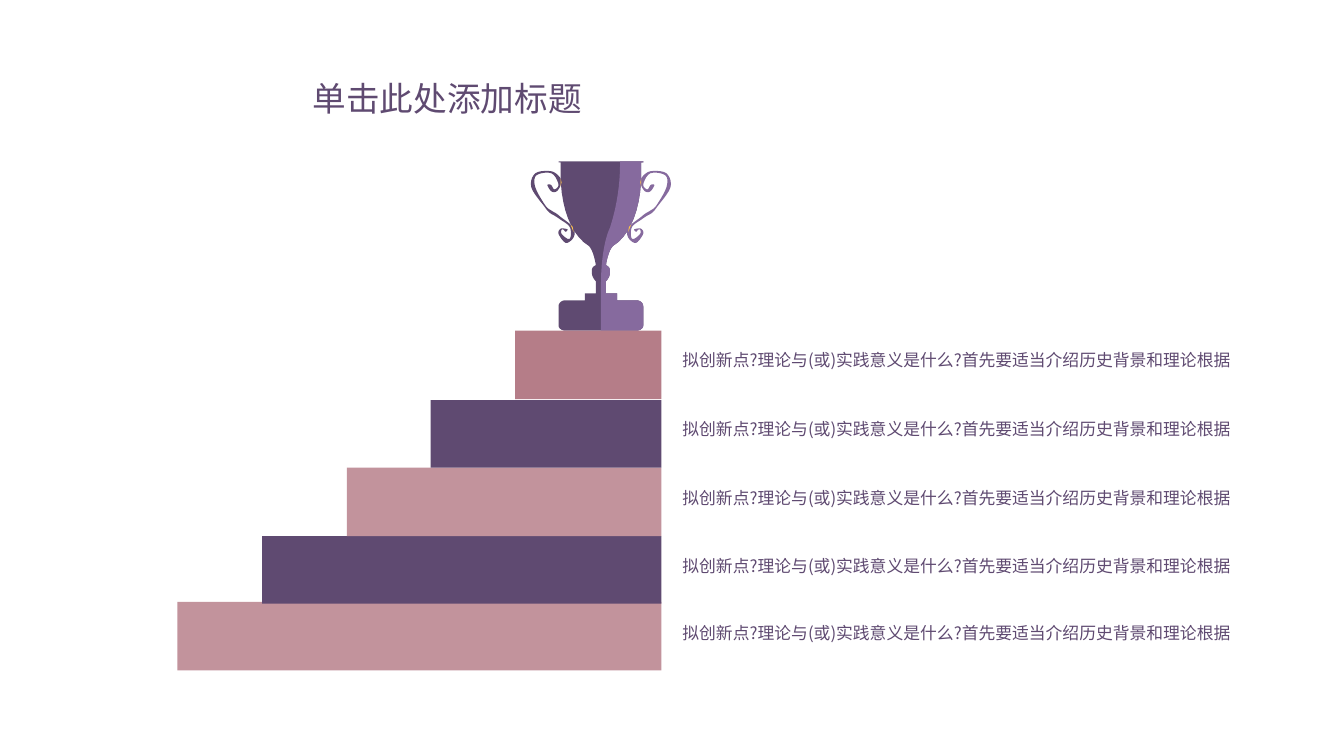
"""Build a staircase slide with a trophy on its top step."""
import pptx
import pptx.dml.color
import pptx.enum.shapes
import pptx.enum.text
import pptx.util
from pptx.util import Inches

COLORS = {
    "plum": "5F4A71",
    "violet": "866A9E",
    "rose": "B57D88",
    "pink": "C2939C",
    "gold": "FEC34D",
}
FONT = "Noto Sans CJK SC"
TITLE = "单击此处添加标题"
POINT = "拟创新点?理论与(或)实践意义是什么?首先要适当介绍历史背景和理论根据"
STEP_RIGHT = 6.56
STEPS = [
    (5.11, 3.28, 0.68, "rose", 3.42),
    (1.76, 5.97, 0.68, "pink", 6.13),
    (2.6, 5.32, 0.67, "plum", 5.46),
    (3.44, 4.64, 0.68, "pink", 4.79),
    (4.27, 3.97, 0.67, "plum", 4.11),
]
AXIS = 5.96
HANDLE = [
    (5.57, 2.16), (5.52, 2.12), (5.47, 2.09), (5.41, 2.04), (5.31, 1.86),
    (5.32, 1.74), (5.47, 1.72), (5.54, 1.83), (5.5, 1.88), (5.47, 1.84),
    (5.45, 1.83), (5.43, 1.84), (5.47, 1.9), (5.52, 1.9), (5.56, 1.84),
    (5.56, 1.77), (5.47, 1.7), (5.31, 1.72), (5.27, 1.86), (5.4, 2.05),
    (5.45, 2.11), (5.5, 2.14), (5.56, 2.18), (5.65, 2.25), (5.66, 2.35),
    (5.63, 2.37), (5.57, 2.32), (5.57, 2.28), (5.59, 2.28), (5.61, 2.3),
    (5.63, 2.28), (5.61, 2.27), (5.56, 2.27), (5.54, 2.32), (5.61, 2.41),
    (5.68, 2.37), (5.7, 2.3), (5.66, 2.23),
]
GLINTS = [
    [(5.56, 1.77), (5.57, 1.81), (5.56, 1.85)],
    [(5.66, 2.23), (5.68, 2.28), (5.69, 2.3), (5.68, 2.25)],
]


def rgb(name):
    """Return the named colour."""
    return pptx.dml.color.RGBColor.from_string(COLORS[name])


def paint(sp, color):
    """Give a shape a flat fill without line or shadow."""
    sp.fill.solid()
    sp.fill.fore_color.rgb = rgb(color)
    sp.line.fill.background()
    sp.shadow.inherit = False


def add_text(s, text, left, top, width, height, size, wrap=True, align=None):
    """Add a one-paragraph text box."""
    sp = s.shapes.add_textbox(Inches(left), Inches(top), Inches(width), Inches(height))
    tf = sp.text_frame
    tf.word_wrap = wrap
    tf.auto_size = pptx.enum.text.MSO_AUTO_SIZE.SHAPE_TO_FIT_TEXT
    tf.text = text
    p = tf.paragraphs[0]
    p.alignment = align
    font = p.runs[0].font
    font.name = FONT
    font.size = pptx.util.Pt(size)
    font.color.rgb = rgb("plum")


def add_step(s, left, top, height, color):
    """Add one step that ends at the common right edge."""
    sp = s.shapes.add_shape(
        pptx.enum.shapes.MSO_SHAPE.RECTANGLE,
        Inches(left), Inches(top), Inches(STEP_RIGHT - left), Inches(height))
    paint(sp, color)


def add_outline(shapes, points, color):
    """Add a closed filled outline."""
    emu = [(Inches(x), Inches(y)) for x, y in points]
    fb = shapes.build_freeform(*emu[0], scale=1.0)
    fb.add_line_segments(emu[1:], close=True)
    paint(fb.convert_to_shape(), color)


def mirror(points):
    """Reflect points across the trophy axis."""
    return [(2 * AXIS - x, y) for x, y in points]


def bezier(p0, p1, p2, p3, n=10):
    """Sample a cubic curve."""
    ts = [i / n for i in range(n + 1)]
    return [tuple((1 - t) ** 3 * a + 3 * t * (1 - t) ** 2 * b
                  + 3 * t * t * (1 - t) * c + t ** 3 * d
                  for a, b, c, d in zip(p0, p1, p2, p3)) for t in ts]


def smooth(points):
    """Round a closed outline through all its points."""
    out = []
    for i, p1 in enumerate(points):
        p0, p2 = points[i - 1], points[(i + 1) % len(points)]
        p3 = points[(i + 2) % len(points)]
        c1 = [b + (c - a) / 6 for a, b, c in zip(p0, p1, p2)]
        c2 = [c - (d - b) / 6 for b, c, d in zip(p1, p2, p3)]
        out += bezier(p1, c1, c2, p2, 5)[:-1]
    return out


def cup_side():
    """Return the left edge of the cup from rim to foot."""
    return [
        (5.54, 1.6), (5.54, 1.61), (5.56, 1.61),
        *bezier((5.56, 1.72), (5.56, 2.05), (5.66, 2.33), (5.84, 2.44)),
        *bezier((5.84, 2.44), (5.86, 2.46), (5.89, 2.51), (5.91, 2.63)),
        *bezier((5.91, 2.63), (5.87, 2.65), (5.87, 2.67), (5.87, 2.7)),
        *bezier((5.87, 2.7), (5.87, 2.74), (5.89, 2.77), (5.91, 2.79)),
        (5.91, 2.91), (5.8, 2.91), (5.8, 2.98),
        *bezier((5.6, 2.98), (5.58, 2.98), (5.54, 3), (5.54, 3.04)),
        *bezier((5.54, 3.23), (5.54, 3.26), (5.58, 3.28), (5.6, 3.28)),
    ]


def add_trophy(s):
    """Add the two-tone trophy as one group."""
    shapes = s.shapes.add_group_shape().shapes
    left = cup_side()
    right = mirror(left)
    shade = [
        *bezier((6.15, 1.6), (6.15, 1.7), (6.15, 1.95), (6.05, 2.26)),
        *bezier((6.05, 2.26), (6.05, 2.26), (5.96, 2.42), (5.96, 2.84)),
        (AXIS, 3.28),
    ]
    handle = smooth(HANDLE)
    add_outline(shapes, left + right[::-1], "plum")
    add_outline(shapes, handle, "plum")
    for glint in GLINTS:
        add_outline(shapes, glint, "gold")
    add_outline(shapes, mirror(handle), "violet")
    add_outline(shapes, right + shade[::-1], "violet")
    for glint in GLINTS:
        add_outline(shapes, mirror(glint), "gold")


def main():
    """Build and save the slide."""
    prs = pptx.Presentation()
    prs.slide_width, prs.slide_height = Inches(13.33), Inches(7.5)
    s = prs.slides.add_slide(prs.slide_layouts[6])
    add_text(s, TITLE, 2.99, 0.72, 2.89, 0.5, 24, wrap=False,
             align=pptx.enum.text.PP_ALIGN.CENTER)
    add_trophy(s)
    for left, top, height, color, _ in STEPS:
        add_step(s, left, top, height, color)
    for text_top in sorted(step[-1] for step in STEPS):
        add_text(s, POINT, 6.67, text_top, 5.71, 0.3, 12)
    prs.save("out.pptx")


if __name__ == "__main__":
    main()
